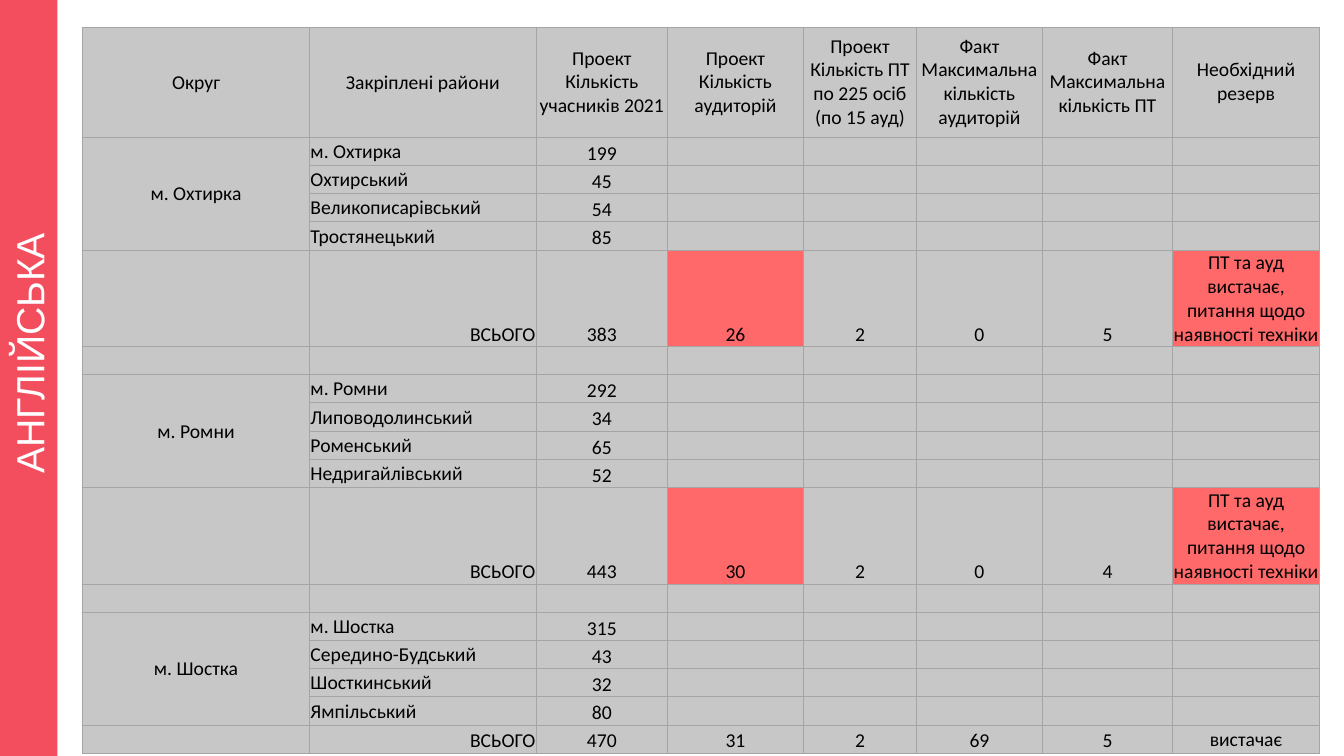
import dataclasses

import lxml.etree
import pptx
import pptx.dml.color
import pptx.enum.shapes
import pptx.enum.text
import pptx.oxml.ns
import pptx.util

ALIGN = pptx.enum.text.PP_ALIGN
ANCHOR = pptx.enum.text.MSO_ANCHOR


@dataclasses.dataclass(frozen=True)
class Theme:
    band: str = "F24E5E"
    band_text: str = "FFFFFF"
    cell: str = "C7C7C7"
    warning: str = "FF6969"
    border: str = "A5A5A5"
    text: str = "000000"
    band_font: str = "Arial"
    table_font: str = "Calibri"
    band_size: int = 28
    table_size: int = 14
    border_width: float = 0.5


THEME = Theme()
SLIDE_WIDTH = pptx.util.Inches(13.33)
SLIDE_HEIGHT = pptx.util.Inches(7.5)
BAND_THICKNESS = 0.0428
TABLE_AREA = {"left": 0.0615, "top": 0.036, "width": 0.9205, "height": 0.924}
COLUMN_WEIGHTS = (2.25, 2.25, 1.3, 1.35, 1.12, 1.25, 1.29, 1.46)
HEADER_WEIGHT, ROW_WEIGHT, NOTE_WEIGHT = 1.09, 0.28, 0.82

HEADERS = (
    "Округ",
    "Закріплені райони",
    "Проект Кількість учасників 2021",
    "Проект\nКількість аудиторій",
    "Проект\nКількість ПТ\nпо 225 осіб\n(по 15 ауд)",
    "Факт\nМаксимальна кількість аудиторій",
    "Факт\nМаксимальна кількість ПТ",
    "Необхідний резерв",
)
SHORTAGE = "ПТ та ауд вистачає, питання щодо наявності техніки"
DISTRICTS = (
    ("м. Охтирка",
     (("м. Охтирка", 199), ("Охтирський", 45), ("Великописарівський", 54), ("Тростянецький", 85)),
     (383, 26, 2, 0, 5, SHORTAGE)),
    ("м. Ромни",
     (("м. Ромни", 292), ("Липоводолинський", 34), ("Роменський", 65), ("Недригайлівський", 52)),
     (443, 30, 2, 0, 4, SHORTAGE)),
    ("м. Шостка",
     (("м. Шостка", 315), ("Середино-Будський", 43), ("Шосткинський", 32), ("Ямпільський", 80)),
     (470, 31, 2, 69, 5, "вистачає")),
)


def color(value):
    return pptx.dml.color.RGBColor.from_string(value)


def apply_format(target, values):
    for name, value in values.items():
        setattr(target, name, value)


def add_element(parent, tag, **attributes):
    return lxml.etree.SubElement(parent, pptx.oxml.ns.qn(tag), attributes)


def style_font(font, name, size, value):
    apply_format(font, {"name": name, "size": pptx.util.Pt(size)})
    font.color.rgb = color(value)


def add_band(slide, text):
    thickness = int(SLIDE_WIDTH * BAND_THICKNESS)
    shape = slide.shapes.add_shape(
        pptx.enum.shapes.MSO_SHAPE.RECTANGLE,
        (thickness - SLIDE_HEIGHT) // 2, (SLIDE_HEIGHT - thickness) // 2,
        SLIDE_HEIGHT, thickness)
    shape.rotation = 270
    shape.shadow.inherit = False
    shape.fill.solid()
    shape.fill.fore_color.rgb = color(THEME.band)
    shape.line.fill.background()
    apply_format(shape.text_frame, {"text": text, "word_wrap": True,
                                    "vertical_anchor": ANCHOR.MIDDLE})
    paragraph = shape.text_frame.paragraphs[0]
    paragraph.alignment = ALIGN.CENTER
    indent = int(SLIDE_HEIGHT * 0.065)
    paragraph._p.get_or_add_pPr().set("marL", str(indent))
    style_font(paragraph.runs[0].font, THEME.band_font, THEME.band_size, THEME.band_text)


def add_borders(cell):
    properties = cell._tc.get_or_add_tcPr()
    width = str(int(pptx.util.Pt(THEME.border_width)))
    for side in ("a:lnL", "a:lnR", "a:lnT", "a:lnB"):
        line = add_element(properties, side, w=width)
        add_element(add_element(line, "a:solidFill"), "a:srgbClr", val=THEME.border)


def style_blank_cell(cell):
    margin = pptx.util.Inches(0.01)
    apply_format(cell, {"margin_left": margin, "margin_right": margin,
                        "margin_top": margin, "margin_bottom": 0})
    add_borders(cell)
    cell.fill.solid()
    cell.fill.fore_color.rgb = color(THEME.cell)
    add_element(cell.text_frame.paragraphs[0]._p, "a:endParaRPr",
                sz=str(THEME.table_size * 100))


def write_cell(cell, text, alignment=ALIGN.CENTER, anchor=ANCHOR.BOTTOM):
    apply_format(cell, {"text": str(text), "vertical_anchor": anchor})
    for paragraph in cell.text_frame.paragraphs:
        paragraph.alignment = alignment
        style_font(paragraph.runs[0].font, THEME.table_font, THEME.table_size, THEME.text)


def row_weights():
    weights = [HEADER_WEIGHT]
    for name, areas, totals in DISTRICTS:
        total_weight = NOTE_WEIGHT if totals[-1] == SHORTAGE else ROW_WEIGHT
        weights += [ROW_WEIGHT] * len(areas) + [total_weight, ROW_WEIGHT]
    return weights[:-1]


def add_grid(slide):
    weights = row_weights()
    left, width = (int(SLIDE_WIDTH * TABLE_AREA[key]) for key in ("left", "width"))
    top, height = (int(SLIDE_HEIGHT * TABLE_AREA[key]) for key in ("top", "height"))
    table = slide.shapes.add_table(
        len(weights), len(COLUMN_WEIGHTS), left, top, width, height).table
    apply_format(table, {"first_row": False, "horz_banding": False})
    for column, weight in zip(table.columns, COLUMN_WEIGHTS):
        column.width = int(width * weight / sum(COLUMN_WEIGHTS))
    for row, weight in zip(table.rows, weights):
        row.height = int(height * weight / sum(weights))
    for cell in table.iter_cells():
        style_blank_cell(cell)
    return table


def write_headers(table):
    for column, text in enumerate(HEADERS):
        cell = table.cell(0, column)
        write_cell(cell, text, anchor=ANCHOR.MIDDLE)
        if column >= 2:
            apply_format(cell, {"margin_left": 0, "margin_right": 0, "margin_top": 0})


def write_district(table, first, name, areas, totals):
    last = first + len(areas)
    table.cell(first, 0).merge(table.cell(last - 1, 0))
    write_cell(table.cell(first, 0), name, anchor=ANCHOR.MIDDLE)
    for row, (area, count) in enumerate(areas, first):
        write_cell(table.cell(row, 1), area, ALIGN.LEFT, ANCHOR.MIDDLE)
        write_cell(table.cell(row, 2), count)
    write_cell(table.cell(last, 1), "ВСЬОГО", ALIGN.RIGHT)
    for column, value in enumerate(totals, 2):
        write_cell(table.cell(last, column), value)
    if totals[-1] == SHORTAGE:
        for column in (3, 7):
            table.cell(last, column).fill.fore_color.rgb = color(THEME.warning)
    else:
        table.cell(last, 7).vertical_anchor = ANCHOR.MIDDLE
    return last + 2


def main():
    presentation = pptx.Presentation()
    apply_format(presentation, {"slide_width": SLIDE_WIDTH, "slide_height": SLIDE_HEIGHT})
    slide = presentation.slides.add_slide(presentation.slide_layouts[6])
    add_band(slide, "АНГЛІЙСЬКА")
    table = add_grid(slide)
    write_headers(table)
    row = 1
    for name, areas, totals in DISTRICTS:
        row = write_district(table, row, name, areas, totals)
    presentation.save("out.pptx")


if __name__ == "__main__":
    main()
